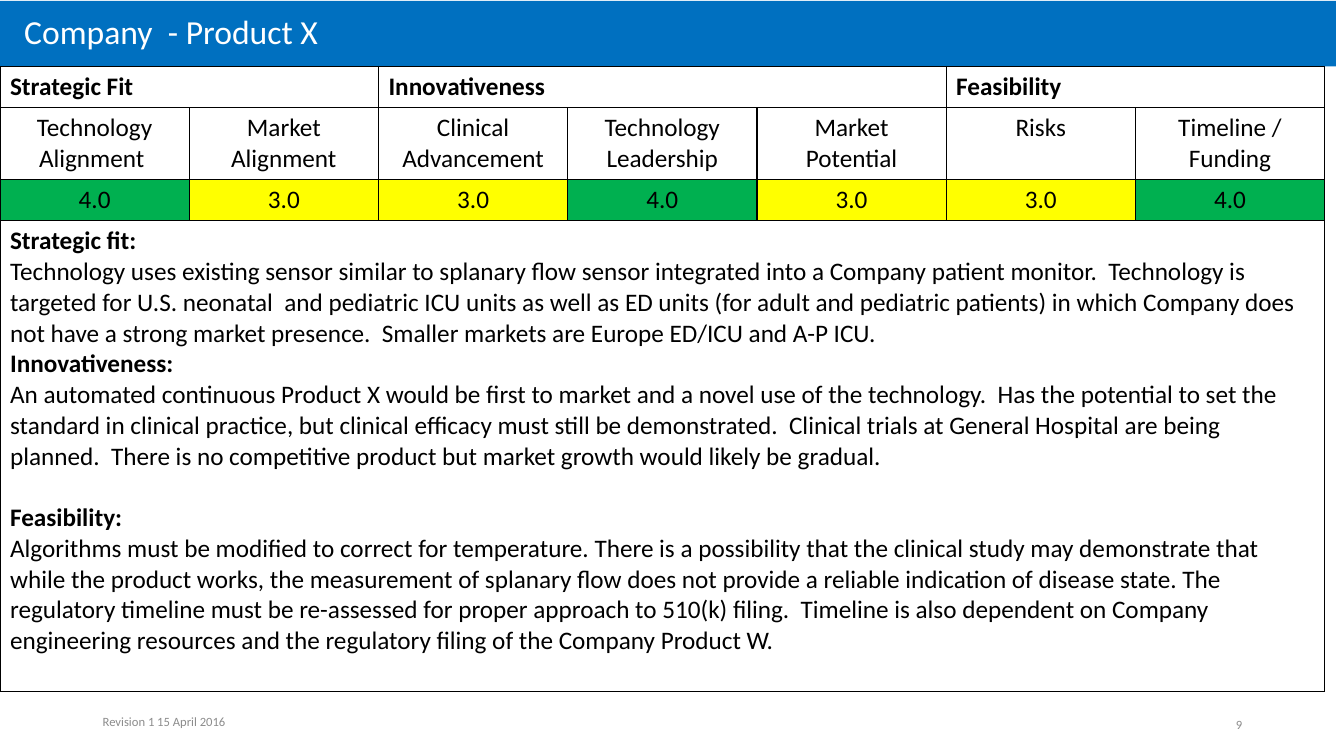
from lxml import etree
from pptx import Presentation
from pptx.dml.color import RGBColor
from pptx.enum.shapes import MSO_SHAPE
from pptx.enum.text import MSO_ANCHOR, PP_ALIGN
from pptx.oxml.ns import qn
from pptx.util import Inches, Pt

RECTANGLE = MSO_SHAPE.RECTANGLE
MIDDLE = MSO_ANCHOR.MIDDLE
LEFT, CENTER, RIGHT = PP_ALIGN.LEFT, PP_ALIGN.CENTER, PP_ALIGN.RIGHT


def color(hex_string):
    return RGBColor.from_string(hex_string)


def style(para, size, hex_string, bold=False, align=LEFT):
    para.alignment = align
    para.font.name = "Calibri"
    para.font.size = Pt(size)
    para.font.bold = bold
    para.font.color.rgb = color(hex_string)


deck = Presentation()
deck.slide_width, deck.slide_height = Inches(13.33), Inches(7.5)
page = deck.slides.add_slide(deck.slide_layouts[6])

# Title bar
title = page.shapes.add_shape(RECTANGLE, 0, Inches(0.01), Inches(13.25), Inches(0.65))
title.shadow.inherit = False
title.fill.solid()
title.fill.fore_color.rgb = color("0070C0")
title.line.fill.background()
title.text_frame.margin_left = Inches(0.24)
title.text_frame.vertical_anchor = MIDDLE
title.text_frame.text = "Company  - Product X"
style(title.text_frame.paragraphs[0], 24, "FFFFFF")
title.text_frame.paragraphs[0].line_spacing = 0.9

# Footer
for text, left, top, height, align in [
    ("Revision 1 15 April 2016", 0.92, 6.97, 0.38, LEFT),
    ("9", 9.42, 7.05, 0.27, RIGHT),
]:
    box = page.shapes.add_textbox(Inches(left), Inches(top), Inches(3), Inches(height))
    box.text_frame.word_wrap = True
    box.text_frame.vertical_anchor = MIDDLE
    box.text_frame.text = text
    style(box.text_frame.paragraphs[0], 9, "8C8C8C", align=align)

# Scorecard table
groups = [("Strategic Fit", 0, 1), ("Innovativeness", 2, 4), ("Feasibility", 5, 6)]
criteria = [
    ("Technology Alignment ", "4.0"),
    ("Market Alignment", "3.0"),
    ("Clinical Advancement", "3.0"),
    ("Technology Leadership", "4.0"),
    ("Market Potential", "3.0"),
    ("Risks", "3.0"),
    ("Timeline /\vFunding", "4.0"),
]
score_fills = {"4.0": "00B050", "3.0": "FFFF00"}
comments = [
    ("Strategic fit:",
     "Technology uses existing sensor similar to splanary flow sensor integrated into a "
     "Company patient monitor.  Technology is targeted for U.S. neonatal  and pediatric ICU "
     "units as well as ED units (for adult and pediatric patients) in which Company does not "
     "have a strong market presence.  Smaller markets are Europe ED/ICU and A-P ICU."),
    ("Innovativeness:",
     "An automated continuous Product X would be first to market and a novel use of the "
     "technology.  Has the potential to set the  standard in clinical practice, but clinical "
     "efficacy must still be demonstrated.  Clinical trials at General Hospital are being "
     "planned.  There is no competitive product but market growth would likely be gradual."),
    ("Feasibility:",
     "Algorithms must be modified to correct for temperature. There is a possibility that the "
     "clinical study may demonstrate that while the product works, the measurement of splanary "
     "flow does not provide a reliable indication of disease state. The regulatory timeline "
     "must be re-assessed for proper approach to 510(k) filing.  Timeline is also dependent on "
     "Company engineering resources and the regulatory filing of the Company Product W."),
]
row_heights = [0.41, 0.71, 0.41, 4.67]
table = page.shapes.add_table(
    len(row_heights), len(criteria), 0, Inches(0.66), Inches(13.14), Inches(sum(row_heights))
).table
table.first_row = table.horz_banding = False
for row, height in zip(table.rows, row_heights):
    row.height = Inches(height)

for cell in table.iter_cells():
    properties = cell._tc.get_or_add_tcPr()
    for side in ("a:lnL", "a:lnR", "a:lnT", "a:lnB"):
        border = etree.SubElement(properties, qn(side), w=str(Pt(1)))
        border_fill = etree.SubElement(border, qn("a:solidFill"))
        etree.SubElement(border_fill, qn("a:srgbClr"), val="000000")
    cell.fill.background()

for name, first, last in groups:
    cell = table.cell(0, first)
    cell.merge(table.cell(0, last))
    cell.text = name
    style(cell.text_frame.paragraphs[0], 18, "000000", bold=True)

for column, (criterion, score) in enumerate(criteria):
    for row, text in ((1, criterion), (2, score)):
        cell = table.cell(row, column)
        cell.text = text
        style(cell.text_frame.paragraphs[0], 18, "000000", align=CENTER)
    cell.fill.solid()
    cell.fill.fore_color.rgb = color(score_fills[score])

comment_cell = table.cell(3, 0)
comment_cell.merge(table.cell(3, len(criteria) - 1))
frame = comment_cell.text_frame
frame.text = "\n".join(line for comment in comments for line in comment)
for index, para in enumerate(frame.paragraphs):
    style(para, 18, "000000", bold=index % 2 == 0)
frame.paragraphs[4].space_before = Pt(22)

deck.save("out.pptx")
